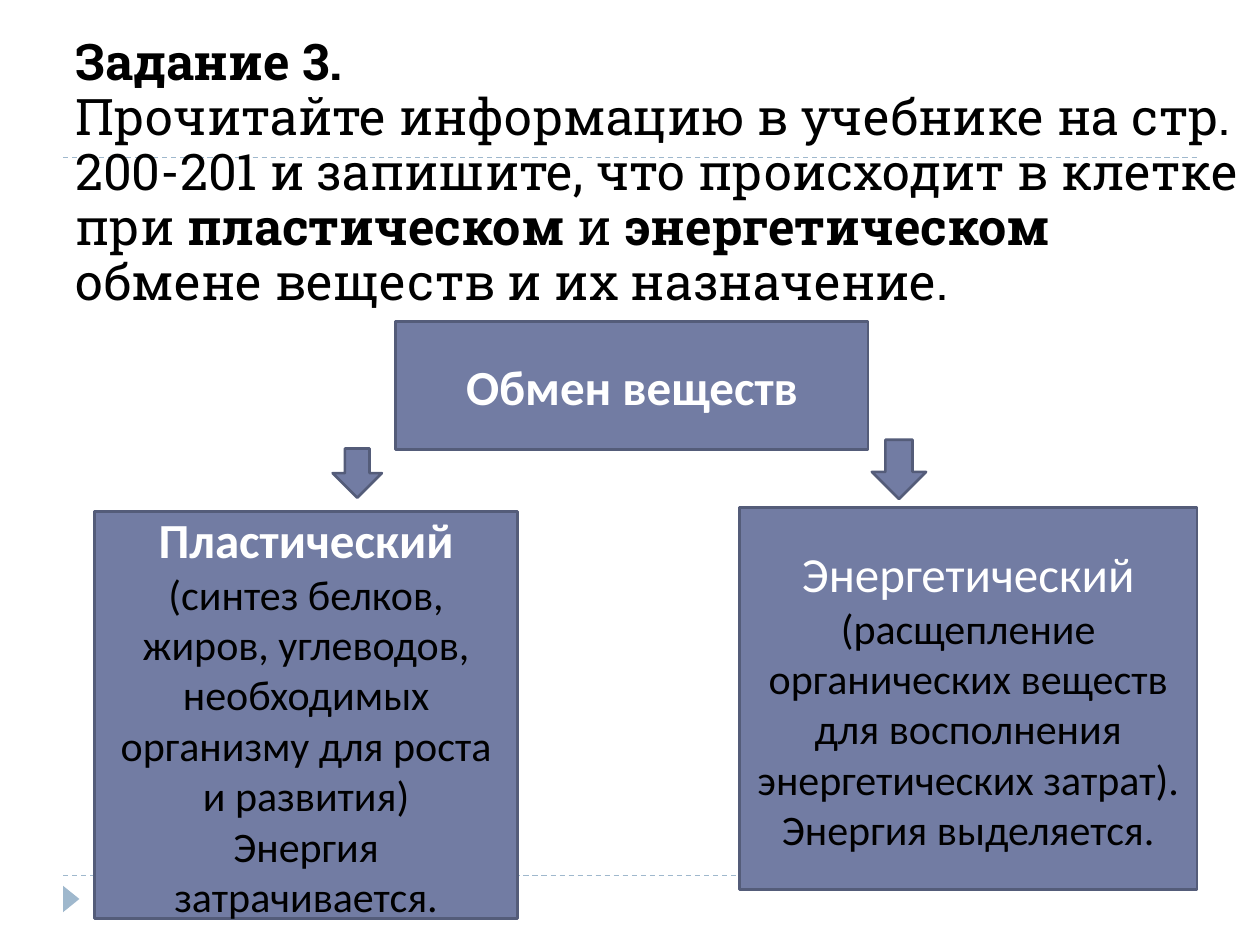
"""Build a slide on the two sides of metabolism in the cell."""
from pptx import Presentation
from pptx.dml.color import RGBColor
from pptx.enum import dml, shapes, text
from pptx.oxml.ns import qn
from pptx.util import Inches, Pt

BLACK = RGBColor(0x00, 0x00, 0x00)
WHITE = RGBColor(0xFF, 0xFF, 0xFF)
PALE_BLUE = RGBColor(0x9F, 0xB8, 0xCD)
SLATE = RGBColor(0x72, 0x7C, 0xA3)
SLATE_EDGE = RGBColor(0x54, 0x5C, 0x79)

TASK_HEADING = "Задание 3."
TASK = [
    ("Прочитайте информацию в учебнике на стр. 200-201 и запишите, "
     "что происходит в клетке при ", False),
    ("пластическом", True),
    (" и ", False),
    ("энергетическом", True),
    (" обмене веществ и их назначение.", False),
]
BOXES = [
    ((3.14, 2.55, 3.75, 1.02), "Обмен веществ", True, []),
    ((0.75, 4.06, 3.36, 3.23), "Пластический", True,
     ["(синтез белков, жиров, углеводов, необходимых организму для роста и развития)",
      "Энергия затрачивается."]),
    ((5.87, 4.03, 3.63, 3.03), "Энергетический", False,
     ["(расщепление органических веществ для восполнения энергетических затрат).",
      "Энергия выделяется."]),
]
ARROWS = [(2.64, 3.56, 0.39, 0.39), (6.92, 3.49, 0.43, 0.47)]
RULE_HEIGHTS = [6.95, 1.25]


def add_run(paragraph, wording, font, size, color, bold):
    run = paragraph.add_run()
    run.text = wording
    run.font.name = font
    run.font.size = Pt(size)
    run.font.color.rgb = color
    run.font.bold = bold


def add_filled(slide, preset, place, fill, edge=None):
    shape = slide.shapes.add_shape(preset, *map(Inches, place))
    shape.shadow.inherit = False
    shape.fill.solid()
    shape.fill.fore_color.rgb = fill
    if edge is None:
        shape.line.fill.background()
    else:
        shape.line.color.rgb = edge
        shape.line.width = Pt(1.5)
    return shape


def add_rule(slide, height):
    rule = slide.shapes.add_connector(
        shapes.MSO_CONNECTOR.STRAIGHT,
        Inches(0.5), Inches(height), Inches(9.5), Inches(height))
    rule.line.color.rgb = PALE_BLUE
    rule.line.width = Pt(0.75)
    rule.line.dash_style = dml.MSO_LINE.DASH
    properties = rule._element.spPr
    properties.append(properties.makeelement(qn("a:effectLst"), {}))


def add_task(slide):
    task = slide.shapes.add_textbox(*map(Inches, (0.5, 1.41, 9.5, 1.08)))
    frame = task.text_frame
    frame.word_wrap = True
    frame.vertical_anchor = text.MSO_ANCHOR.BOTTOM
    frame.margin_bottom = Inches(0.02)
    paragraph = frame.paragraphs[0]
    paragraph.line_spacing = 0.91
    add_run(paragraph, TASK_HEADING, "Roboto Slab", 28.8, BLACK, True)
    paragraph.add_line_break()
    for wording, bold in TASK:
        add_run(paragraph, wording, "Roboto Slab", 28.8, BLACK, bold)


def add_box(slide, place, heading, bold, details):
    box = add_filled(slide, shapes.MSO_SHAPE.RECTANGLE, place, SLATE, SLATE_EDGE)
    frame = box.text_frame
    frame.word_wrap = True
    frame.vertical_anchor = text.MSO_ANCHOR.MIDDLE
    add_run(frame.paragraphs[0], heading, "Calibri", 28, WHITE, bold)
    for detail in details:
        add_run(frame.add_paragraph(), detail, "Calibri", 24, BLACK, False)
    for paragraph in frame.paragraphs:
        paragraph.alignment = text.PP_ALIGN.CENTER


def main():
    deck = Presentation()
    deck.slide_width, deck.slide_height = Inches(10), Inches(7.5)
    slide = deck.slides.add_slide(deck.slide_layouts[6])
    for height in RULE_HEIGHTS:
        add_rule(slide, height)
    marker = add_filled(slide, shapes.MSO_SHAPE.ISOSCELES_TRIANGLE,
                        (0.46, 7.07, 0.21, 0.13), PALE_BLUE)
    marker.rotation = 90
    add_task(slide)
    for box in BOXES:
        add_box(slide, *box)
    for place in ARROWS:
        add_filled(slide, shapes.MSO_SHAPE.DOWN_ARROW, place, SLATE, SLATE_EDGE)
    deck.save("out.pptx")


if __name__ == "__main__":
    main()
